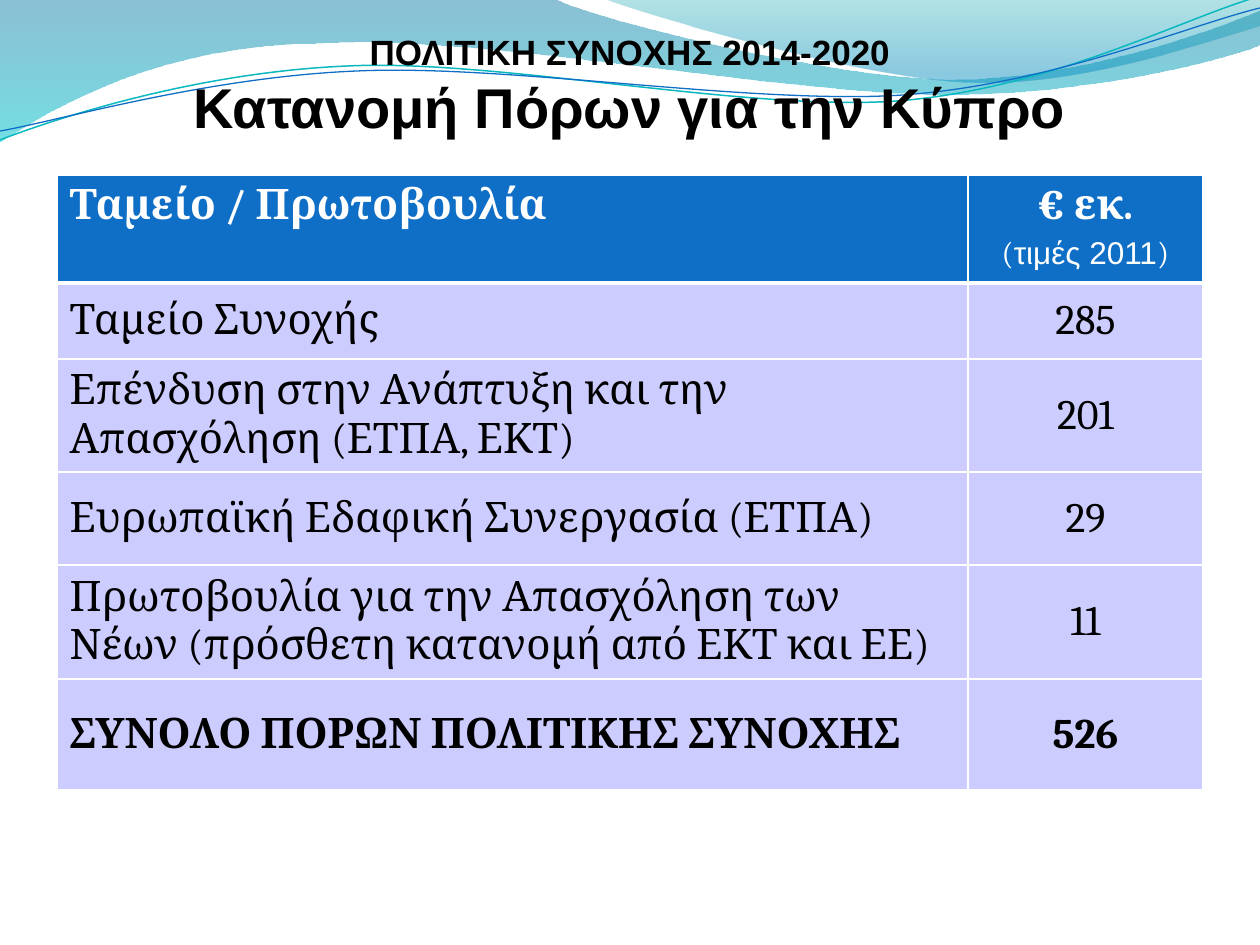
"""Builds the slide on the allocation of cohesion policy funds for Cyprus."""
from dataclasses import dataclass
from math import cos, radians, sin

from lxml import etree
from pptx import Presentation
from pptx.dml.color import RGBColor
from pptx.enum.text import MSO_ANCHOR, MSO_AUTO_SIZE, PP_ALIGN
from pptx.oxml.ns import qn
from pptx.util import Emu, Pt

LEFT, CENTER = PP_ALIGN.LEFT, PP_ALIGN.CENTER
TOP, MIDDLE, BOTTOM = MSO_ANCHOR.TOP, MSO_ANCHOR.MIDDLE, MSO_ANCHOR.BOTTOM
NO_AUTOFIT = MSO_AUTO_SIZE.NONE
TITLE_ONLY = 5
EMU_PER_PX = 914400 / 126


@dataclass(frozen=True)
class Theme:
    heading_font: str = "Arial"
    table_font: str = "Cambria"
    ink: str = "000000"
    white: str = "FFFFFF"
    header_fill: str = "0F6FC6"
    row_fill: str = "CCCCFF"
    kicker_size: int = 20
    title_size: int = 32
    table_size: int = 24
    note_size: int = 18
    thin_border: int = 1
    thick_border: int = 3


THEME = Theme()

KICKER = "ΠΟΛΙΤΙΚΗ ΣΥΝΟΧΗΣ 2014-2020"
HEADLINE = "Κατανομή Πόρων για την Κύπρο"
FUND_HEADER, AMOUNT_HEADER = "Ταμείο / Πρωτοβουλία", "€ εκ."
PRICE_NOTE = [("(", THEME.table_font), ("τιμές 2011", THEME.heading_font), (")", THEME.table_font)]
FUNDS = [
    ("Ταμείο Συνοχής", "285"),
    ("Επένδυση στην Ανάπτυξη και την Απασχόληση (ΕΤΠΑ, ΕΚΤ)", "201"),
    ("Ευρωπαϊκή Εδαφική Συνεργασία (ΕΤΠΑ)", "29"),
    ("Πρωτοβουλία για την Απασχόληση των Νέων (πρόσθετη κατανομή από ΕΚΤ και ΕΕ)", "11"),
    ("ΣΥΝΟΛΟ ΠΟΡΩΝ ΠΟΛΙΤΙΚΗΣ ΣΥΝΟΧΗΣ", "526"),
]
TABLE_LEFT, TABLE_TOP = 57, 175
COLUMN_WIDTHS = [911, 235]
ROW_HEIGHTS = [108, 76, 113, 93, 114, 111]

BANDS = [
    {"path": [(0, -1), (554, -1), (600, 21, 837, 79, 955, 79), (1075, 79, 1207, 33, 1260, 11),
              (1261, 45), (1238, 55, 1096, 96, 940, 94), (784, 94, 481, 35, 324, 43),
              (161, 44, 58, 105, -1, 142), (0, -1)],
     "stops": [(0, "0074A1", 45), (1, "00C6CF", 55)]},
    {"path": [(604, -1), (641, 14, 859, 78, 969, 82), (1079, 87, 1211, 40, 1260, 26),
              (1260, 0), (604, -1)],
     "stops": [(0, "00A1A9", 30), (0.8, "008BBF", 45)]},
]
STRAND_TILT = 2.7
STRANDS = [
    {"path": [(0, 140), (60, 117, 199, 72, 349, 66), (498, 59, 747, 112, 898, 101),
              (1050, 89, 1182, 19, 1257, -3)],
     "pivot": (629, 72), "color": "0AB8BF", "width": 0.85},
    {"path": [(0, 131), (58, 121, 207, 77, 357, 71), (508, 64, 752, 105, 903, 95),
              (1053, 84, 1186, 26, 1260, 8)],
     "pivot": (629, 74), "color": "0F6FC6", "width": 0.75},
]


def px(length):
    return Emu(round(length * EMU_PER_PX))


def rgb(color):
    return RGBColor.from_string(color)


def add_text(paragraph, text, font=THEME.table_font, size=THEME.table_size,
             color=THEME.ink, bold=False, align=LEFT):
    paragraph.alignment = align
    run = paragraph.add_run()
    run.text = text
    run.font.name = font
    run.font.size = Pt(size)
    run.font.bold = bold
    run.font.color.rgb = rgb(color)


def turn(step, pivot, degrees):
    c, s = cos(radians(degrees)), sin(radians(degrees))
    turned = []
    for x, y in zip(step[::2], step[1::2]):
        dx, dy = x - pivot[0], y - pivot[1]
        turned += [pivot[0] + dx * c - dy * s, pivot[1] + dx * s + dy * c]
    return turned


def add_wave(slide, path, close):
    points = [(px(x), px(y)) for step in path for x, y in zip(step[::2], step[1::2])]
    builder = slide.shapes.build_freeform(*points[0])
    builder.add_line_segments(points[1:], close=close)
    wave = builder.convert_to_shape()
    wave.shadow.inherit = False
    segments = wave._element.spPr.iter(qn("a:lnTo"))
    lines = iter(list(segments))
    for step in path[1:]:
        first = next(lines)
        if len(step) == 6:
            first.tag = qn("a:cubicBezTo")
            for line in (next(lines), next(lines)):
                first.append(line[0])
                line.getparent().remove(line)
    return wave


def add_band(slide, path, stops):
    band = add_wave(slide, path, close=True)
    band.line.fill.background()
    band.fill.gradient()
    band.fill.gradient_angle = 270
    for stop, (position, color, _) in zip(band.fill.gradient_stops, stops):
        stop.position = position
        stop.color.rgb = rgb(color)
    for tint, (_, _, opacity) in zip(band._element.spPr.iter(qn("a:srgbClr")), stops):
        etree.SubElement(tint, qn("a:alpha"), val=str(opacity * 1000))


def add_strand(slide, path, pivot, color, width):
    level_path = [turn(step, pivot, STRAND_TILT) for step in path]
    strand = add_wave(slide, level_path, close=False)
    strand.rotation = 360 - STRAND_TILT
    strand.fill.background()
    strand.line.color.rgb = rgb(color)
    strand.line.width = Pt(width)


def set_borders(cell, **widths):
    properties = cell._tc.get_or_add_tcPr()
    for index, side in enumerate("LRTB"):
        width = widths.get(side, THEME.thin_border)
        border = etree.Element(qn(f"a:ln{side}"), w=str(Pt(width)))
        fill = etree.SubElement(border, qn("a:solidFill"))
        etree.SubElement(fill, qn("a:srgbClr"), val=THEME.white)
        properties.insert(index, border)


def style_cell(cell, fill, anchor, **borders):
    cell.fill.solid()
    cell.fill.fore_color.rgb = rgb(fill)
    cell.vertical_anchor = anchor
    set_borders(cell, **borders)


def add_funds_table(slide):
    table = slide.shapes.add_table(
        len(ROW_HEIGHTS), len(COLUMN_WIDTHS), px(TABLE_LEFT), px(TABLE_TOP),
        px(sum(COLUMN_WIDTHS)), px(sum(ROW_HEIGHTS))).table
    for column, width in zip(table.columns, COLUMN_WIDTHS):
        column.width = px(width)
    for row, height in zip(table.rows, ROW_HEIGHTS):
        row.height = px(height)

    aligns = [LEFT, CENTER]
    for column, label in enumerate([FUND_HEADER, AMOUNT_HEADER]):
        cell = table.cell(0, column)
        style_cell(cell, THEME.header_fill, TOP, B=THEME.thick_border)
        add_text(cell.text_frame.paragraphs[0], label, color=THEME.white, bold=True,
                 align=aligns[column])
    note = table.cell(0, 1).text_frame.add_paragraph()
    note.space_before = Pt(0.2 * THEME.note_size)
    for text, font in PRICE_NOTE:
        add_text(note, text, font=font, size=THEME.note_size, color=THEME.white, align=CENTER)

    for row, fund in enumerate(FUNDS, start=1):
        top_border = THEME.thick_border if row == 1 else THEME.thin_border
        for column, text in enumerate(fund):
            cell = table.cell(row, column)
            style_cell(cell, THEME.row_fill, MIDDLE, T=top_border)
            add_text(cell.text_frame.paragraphs[0], text, bold=row == len(FUNDS),
                     align=aligns[column])


def place_title(slide):
    title = slide.shapes.title
    title.left, title.top, title.width, title.height = px(0), px(0), px(1260), px(199)
    frame = title.text_frame
    frame.word_wrap = True
    frame.auto_size = NO_AUTOFIT
    frame.vertical_anchor = BOTTOM
    frame.margin_left = frame.margin_right = px(0)
    frame.margin_top, frame.margin_bottom = px(6), px(59)
    heading = frame.paragraphs[0]
    style = {"font": THEME.heading_font, "bold": True, "align": CENTER}
    add_text(heading, KICKER, size=THEME.kicker_size, **style)
    heading.add_line_break()
    add_text(heading, HEADLINE, size=THEME.title_size, **style)
    slide.shapes._spTree.append(title._element)


def main():
    deck = Presentation()
    deck.slide_width, deck.slide_height = px(1260), px(945)
    slide = deck.slides.add_slide(deck.slide_layouts[TITLE_ONLY])
    for band in BANDS:
        add_band(slide, **band)
    for strand in STRANDS:
        add_strand(slide, **strand)
    add_funds_table(slide)
    place_title(slide)
    deck.save("out.pptx")


if __name__ == "__main__":
    main()
